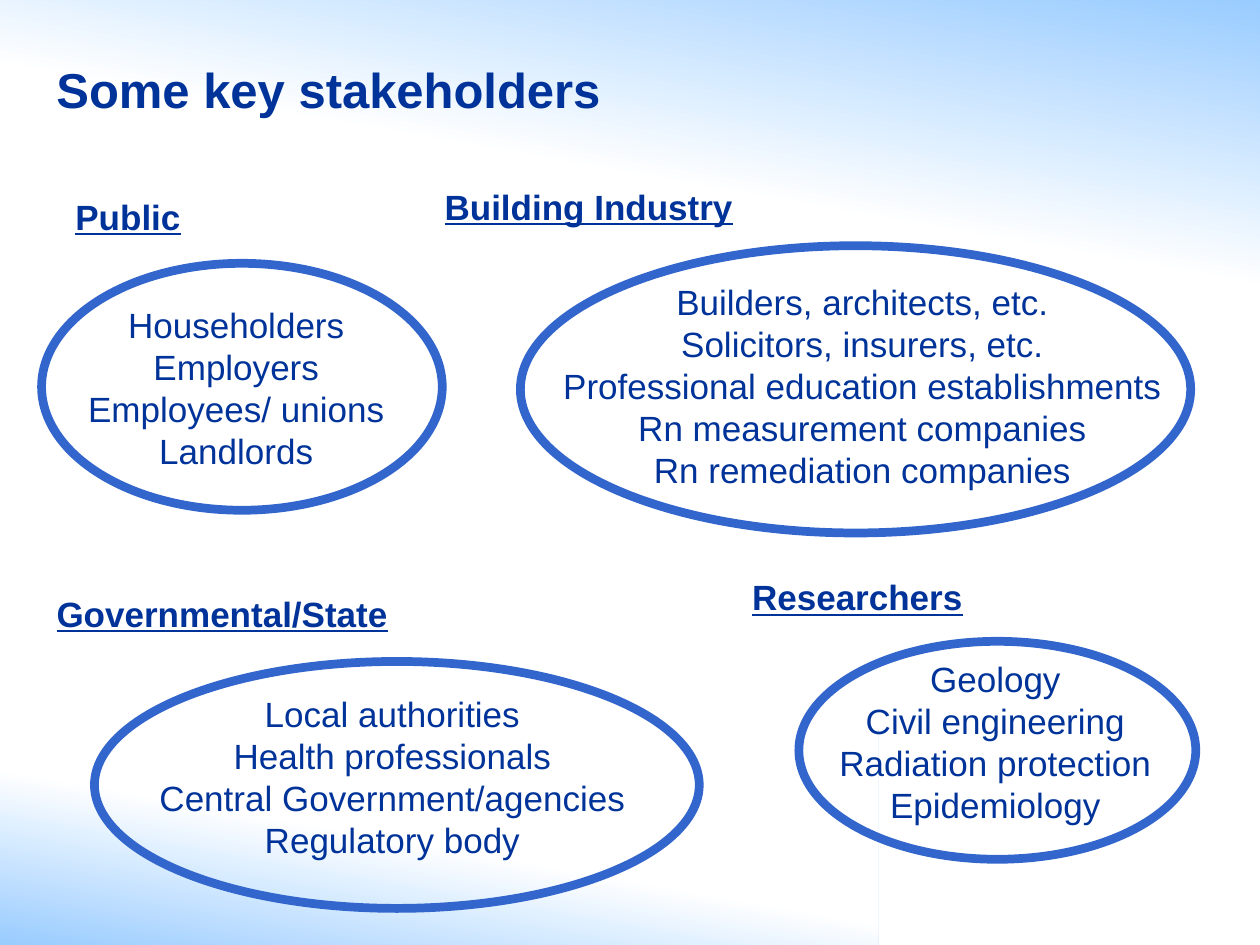
"""Build a slide showing four groups of key stakeholders."""
from pptx import Presentation
from pptx.dml.color import RGBColor
from pptx.enum.shapes import MSO_SHAPE
from pptx.enum.text import MSO_ANCHOR, MSO_AUTO_SIZE, PP_ALIGN
from pptx.util import Pt

LEFT, CENTER = PP_ALIGN.LEFT, PP_ALIGN.CENTER
TOP, MIDDLE = MSO_ANCHOR.TOP, MSO_ANCHOR.MIDDLE
GROW, FIXED = MSO_AUTO_SIZE.SHAPE_TO_FIT_TEXT, MSO_AUTO_SIZE.NONE
RECTANGLE, OVAL = MSO_SHAPE.RECTANGLE, MSO_SHAPE.OVAL

THEME = {
    "font": "Arial",
    "text": RGBColor.from_string("003399"),
    "ring": RGBColor.from_string("3366CC"),
    "sky": RGBColor.from_string("99CCFF"),
    "white": RGBColor.from_string("FFFFFF"),
    "title_size": Pt(28),
    "body_size": Pt(20),
    "ring_width": Pt(5),
}

deck = Presentation()
deck.slide_width, deck.slide_height = Pt(720), Pt(540)
page = deck.slides.add_slide(deck.slide_layouts[6])


def add_text(text, *, frame, size=THEME["body_size"], bold=False, underline=False,
             align=LEFT, anchor=TOP, wrap=False, fit=GROW):
    """Add a text box with one paragraph for each line of text."""
    box = page.shapes.add_textbox(*map(Pt, frame)).text_frame
    box.word_wrap, box.auto_size, box.vertical_anchor = wrap, fit, anchor
    for index, line in enumerate(text.split("\n")):
        para = box.add_paragraph() if index else box.paragraphs[0]
        para.alignment = align
        span = para.add_run()
        span.text = line
        font = span.font
        font.name, font.size, font.color.rgb = THEME["font"], size, THEME["text"]
        font.bold, font.underline = bold, underline


washes = [
    ((0, 417.6, 501.84, 122.4), 80, 0.48),
    ((0, 0, 720, 167.76), 260, 0.56),
]
for frame, angle, white_stop in washes:
    wash = page.shapes.add_shape(RECTANGLE, *map(Pt, frame))
    wash.shadow.inherit = False
    wash.line.fill.background()
    wash.fill.gradient()
    wash.fill.gradient_angle = angle
    start, end = wash.fill.gradient_stops
    start.color.rgb, start.position = THEME["sky"], 0
    end.color.rgb, end.position = THEME["white"], white_stop

groups = [
    ("Public", (36, 108, 74.88, 31.68),
     (23.76, 150.48, 228.96, 141.12), (42.48, 169.92, 185.04, 128.16),
     "Householders\nEmployers\nEmployees/ unions\nLandlords"),
    ("Governmental/State", (25.2, 334.8, 205.2, 31.68),
     (54, 378, 345.6, 141.12), (82.8, 392.4, 282.96, 104.4),
     "Local authorities\nHealth professionals\nCentral Government/agencies\nRegulatory body"),
    ("Building Industry", (246.96, 102.24, 180.72, 31.68),
     (297.36, 140.4, 383.04, 164.16), (303.12, 156.96, 379.44, 128.16),
     "Builders, architects, etc.\nSolicitors, insurers, etc.\n"
     "Professional education establishments\nRn measurement companies\nRn remediation companies"),
    ("Researchers", (422.64, 325.44, 136.08, 31.68),
     (456.48, 366.48, 226.8, 124.56), (468, 372.24, 201.6, 104.4),
     "Geology\nCivil engineering\nRadiation protection\nEpidemiology"),
]
for heading, heading_frame, ring_frame, member_frame, members in groups:
    ring = page.shapes.add_shape(OVAL, *map(Pt, ring_frame))
    ring.shadow.inherit = False
    ring.fill.background()
    ring.line.color.rgb, ring.line.width = THEME["ring"], THEME["ring_width"]
    add_text(members, frame=member_frame, align=CENTER)
    add_text(heading, frame=heading_frame, bold=True, underline=True)

add_text("Some key stakeholders", frame=(25.2, 5.76, 429.84, 90), size=THEME["title_size"],
         bold=True, anchor=MIDDLE, wrap=True, fit=FIXED)

deck.save("out.pptx")
